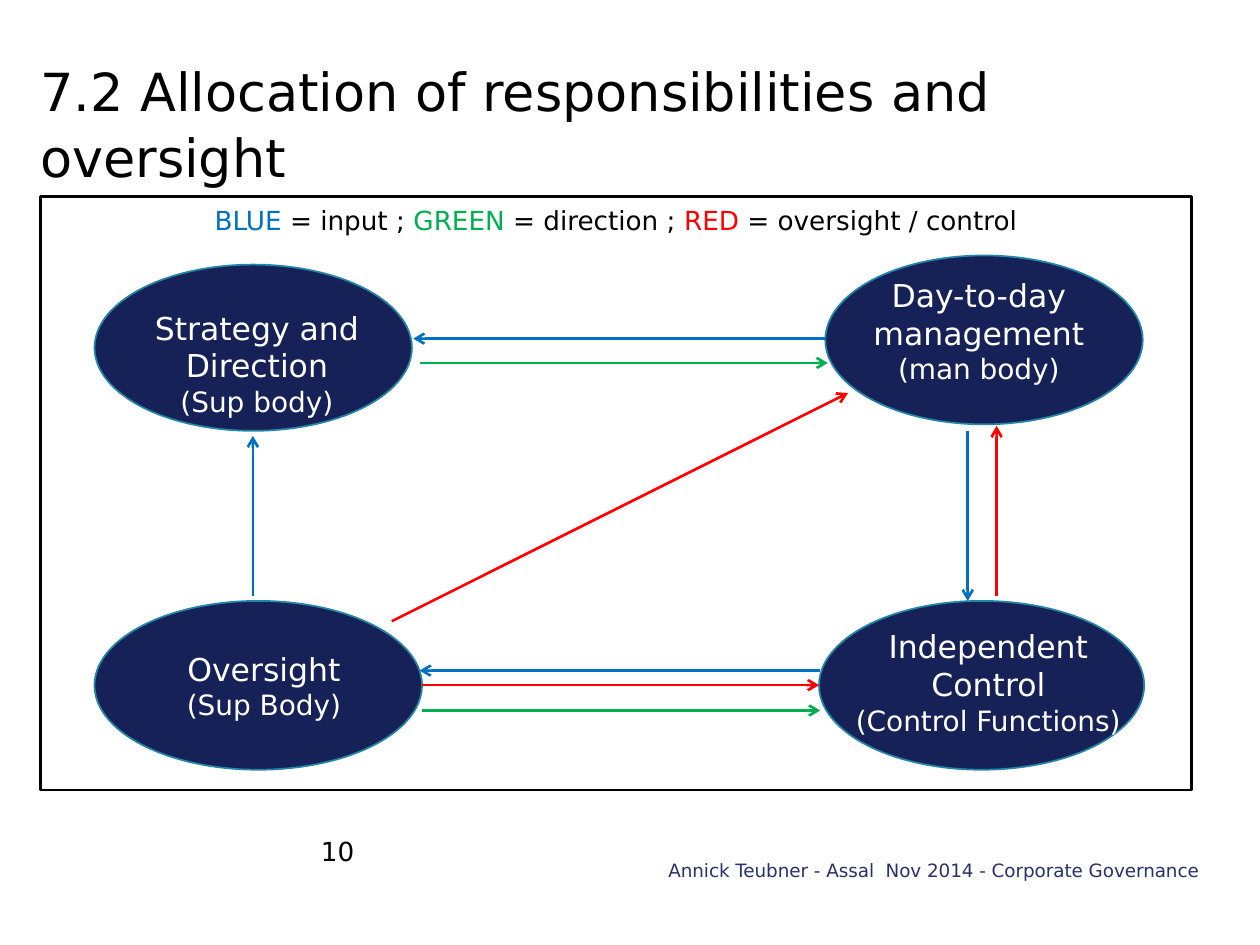
"""Build the slide on allocation of responsibilities and oversight."""
from dataclasses import dataclass

from lxml import etree
from pptx import Presentation
from pptx import util as u
from pptx.dml.color import RGBColor
from pptx.enum import shapes, text
from pptx.oxml import ns


@dataclass(frozen=True)
class Theme:
    font: str = "DejaVu Sans"
    black: str = "000000"
    white: str = "FFFFFF"
    blue: str = "0070C0"
    green: str = "00B050"
    red: str = "FF0000"
    navy: str = "162257"
    teal: str = "2386A9"
    indigo: str = "28316C"
    title: float = 30
    label: float = 18
    sublabel: float = 16
    body: float = 15
    footer: float = 10.5
    line: float = 1.5
    outline: float = 1


def assign(obj, values):
    for name, value in values.items():
        setattr(obj, name, value)


class Deck:
    def __init__(self, theme, width, height):
        self.theme = theme
        self.prs = Presentation()
        assign(self.prs, {"slide_width": u.Pt(width), "slide_height": u.Pt(height)})
        self.s = self.prs.slides.add_slide(self.prs.slide_layouts[6])

    def stroke(self, line, color, width):
        line.color.rgb = RGBColor.from_string(color)
        line.width = u.Pt(width)

    def typeset(self, sp, paragraphs, align, spacing=None, inset=0, **frame):
        tf = sp.text_frame
        margins = {f"margin_{side}": u.Pt(inset) for side in ("left", "right")}
        margins |= {f"margin_{side}": u.Pt(inset / 2) for side in ("top", "bottom")}
        assign(tf, {"word_wrap": True, "vertical_anchor": text.MSO_ANCHOR.TOP} | margins | frame)
        for i, runs in enumerate(paragraphs):
            p = tf.add_paragraph() if i else tf.paragraphs[0]
            assign(p, {"alignment": align, "line_spacing": spacing and u.Pt(spacing)})
            for words, size, color in runs:
                r = p.add_run()
                r.text = words
                assign(r.font, {"name": self.theme.font, "size": u.Pt(size)})
                r.font.color.rgb = RGBColor.from_string(color)

    def text(self, box, paragraphs, align=text.PP_ALIGN.CENTER, **fmt):
        sp = self.s.shapes.add_textbox(*map(u.Pt, box))
        self.typeset(sp, paragraphs, align, **fmt)

    def shape(self, kind, box, line, width, fill=None):
        sp = self.s.shapes.add_shape(kind, *map(u.Pt, box))
        sp.shadow.inherit = False
        if fill:
            sp.fill.solid()
            sp.fill.fore_color.rgb = RGBColor.from_string(fill)
        else:
            sp.fill.background()
        self.stroke(sp.line, line, width)
        return sp

    def arrow(self, start, end, color):
        c = self.s.shapes.add_connector(
            shapes.MSO_CONNECTOR.STRAIGHT, *map(u.Pt, (*start, *end)))
        self.stroke(c.line, color, self.theme.line)
        props = c.element.spPr
        etree.SubElement(props.find(ns.qn("a:ln")), ns.qn("a:tailEnd"), type="arrow")
        etree.SubElement(props, ns.qn("a:effectLst"))

    def role(self, oval, box, name, body):
        t = self.theme
        self.shape(shapes.MSO_SHAPE.OVAL, oval, t.teal, t.outline, t.navy)
        self.text(box, [[(name, t.label, t.white)], [(body, t.sublabel, t.white)]],
                  inset=7.2, auto_size=text.MSO_AUTO_SIZE.SHAPE_TO_FIT_TEXT)


def main():
    t = Theme()
    d = Deck(t, 720, 540)
    d.text((23, 31.7, 658, 76.3),
           [[("7.2 Allocation of responsibilities and oversight", t.title, t.black)]],
           text.PP_ALIGN.LEFT, spacing=37.5, vertical_anchor=text.MSO_ANCHOR.MIDDLE)

    frame = d.shape(shapes.MSO_SHAPE.RECTANGLE, (23, 112.3, 658, 339.1), t.black, t.line)
    legend = [("BLUE", t.blue), (" = input ; ", t.black), ("GREEN", t.green),
              (" = direction ; ", t.black), ("RED", t.red),
              (" = oversight / control", t.black)]
    d.typeset(frame, [[(words, t.body, color) for words, color in legend]],
              text.PP_ALIGN.CENTER, spacing=22.5)

    for role in (
        ((54, 151.2, 181.4, 95), (66.2, 172.8, 161.3, 70.6),
         "Strategy and Direction", "(Sup body)"),
        ((471.6, 146, 181.4, 96.5), (469.4, 154.1, 180, 70.6),
         "Day-to-day management", "(man body)"),
        ((54, 343.4, 187.2, 96.5), (93.6, 367.9, 114.5, 48.2),
         "Oversight", "(Sup Body)"),
        ((468, 343.4, 185.8, 96.5), (475.9, 355, 177.8, 70.6),
         "Independent Control", "(Control Functions)"),
    ):
        d.role(*role)

    for arrow in (
        ((239.8, 207.4), (473, 207.4), t.green),
        ((472.3, 193.5), (236.2, 193.5), t.blue),
        ((569.5, 340.6), (569.5, 243.4), t.red),
        ((553, 246.2), (553, 343.4), t.blue),
        ((223.9, 355), (484.6, 224.6), t.red),
        ((241.2, 391.5), (468, 391.5), t.red),
        ((468.7, 383.2), (239.8, 383.2), t.blue),
        ((144.5, 340.6), (144.5, 249.1), t.blue),
        ((241.2, 406), (468.7, 406), t.green),
    ):
        d.arrow(*arrow)

    d.text((343.4, 491, 342, 5.8),
           [[("Annick Teubner - Assal  Nov 2014 - Corporate Governance", t.footer, t.indigo)]],
           text.PP_ALIGN.RIGHT)
    d.text((169.2, 466.6, 47.5, 28.8), [[("10", t.body, t.black)]],
           vertical_anchor=text.MSO_ANCHOR.BOTTOM)
    d.prs.save("out.pptx")


if __name__ == "__main__":
    main()
